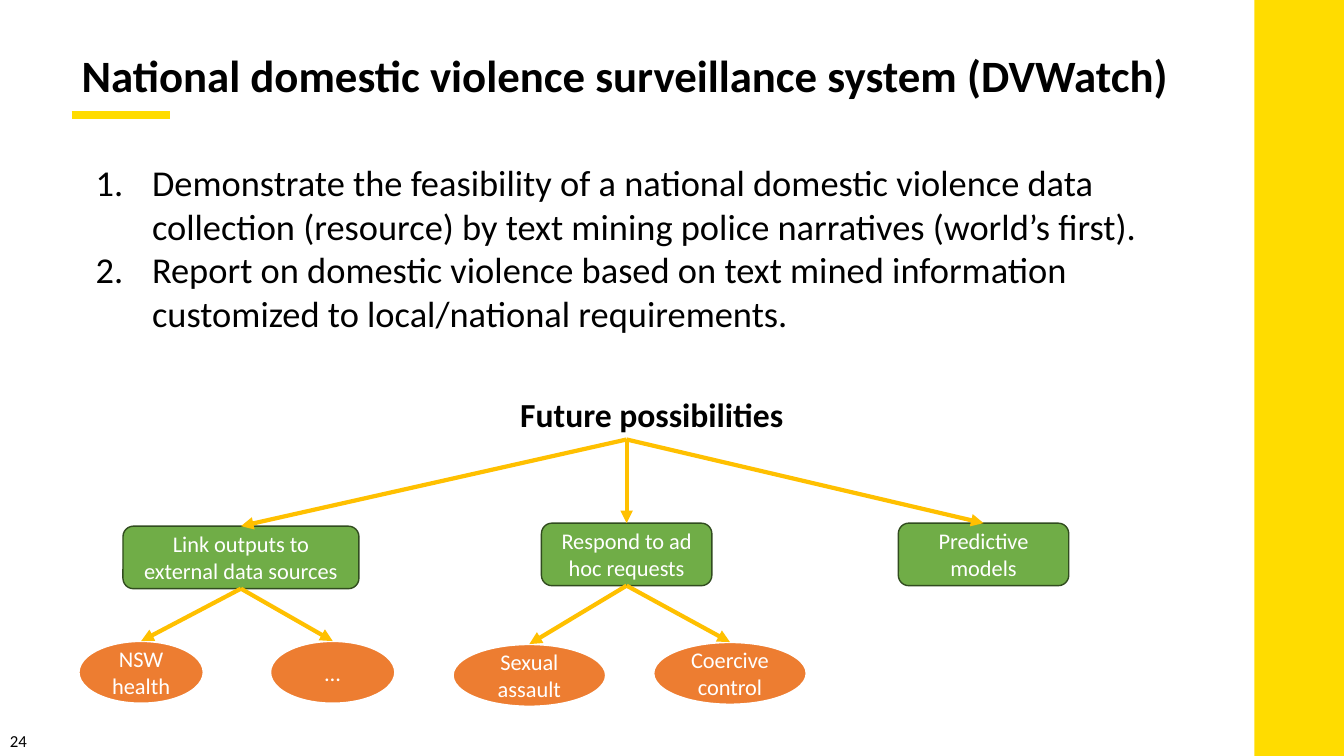
from dataclasses import dataclass

from lxml.etree import SubElement
from pptx import Presentation
from pptx.dml.color import RGBColor
from pptx.enum.shapes import MSO_CONNECTOR, MSO_SHAPE
from pptx.enum.text import MSO_ANCHOR, MSO_AUTO_SIZE, PP_ALIGN
from pptx.oxml.ns import qn
from pptx.shapes.autoshape import Shape
from pptx.shapes.connector import Connector
from pptx.slide import Slide
from pptx.text.text import TextFrame
from pptx.util import Emu, Pt


@dataclass(frozen=True)
class Theme:
    font: str = "Calibri"
    text: str = "000000"
    light: str = "FFFFFF"
    accent: str = "FFDC00"
    arrow: str = "FFC000"
    branch_fill: str = "70AD47"
    branch_line: str = "314C1F"
    leaf_fill: str = "ED7D31"
    title_size: int = 32
    body_size: int = 26
    heading_size: int = 24
    node_size: int = 16
    number_size: int = 12


@dataclass(frozen=True)
class Box:
    left: int
    top: int
    width: int
    height: int


@dataclass(frozen=True)
class Node:
    text: str
    box: Box
    children: tuple["Node", ...] = ()


THEME = Theme()
SLIDE_WIDTH, SLIDE_HEIGHT = 1333, 750
BAND_LEFT = 1244

GOALS = (
    "Demonstrate the feasibility of a national domestic violence data collection "
    "(resource) by text mining police narratives (world’s first).",
    "Report on domestic violence based on text mined information customized to "
    "local/national requirements.",
)

BRANCHES = (
    Node("Link outputs to external data sources", Box(122, 522, 234, 62), (
        Node("NSW health", Box(78, 636, 124, 62)),
        Node("…", Box(268, 636, 124, 62)),
    )),
    Node("Respond to ad hoc requests", Box(537, 519, 169, 62), (
        Node("Sexual assault", Box(449, 639, 152, 62)),
        Node("Coercive control", Box(648, 637, 152, 62)),
    )),
    Node("Predictive models", Box(891, 519, 169, 62)),
)


def px(length: int) -> Emu:
    """One px is a hundredth of an inch."""
    return Emu(length * 9144)


def place(box: Box) -> tuple[Emu, Emu, Emu, Emu]:
    return px(box.left), px(box.top), px(box.width), px(box.height)


def color(value: str) -> RGBColor:
    return RGBColor.from_string(value)


def format_text(text_frame: TextFrame, size: int, text_color: str = THEME.text,
                bold: bool = False, align: PP_ALIGN = PP_ALIGN.LEFT) -> None:
    for paragraph in text_frame.paragraphs:
        paragraph.alignment = align
        for run in paragraph.runs:
            run.font.name = THEME.font
            run.font.size = Pt(size)
            run.font.bold = bold
            run.font.color.rgb = color(text_color)


def add_text(slide: Slide, box: Box, text: str, wrap: bool = True) -> Shape:
    shape = slide.shapes.add_textbox(*place(box))
    shape.text_frame.word_wrap = wrap
    shape.text_frame.auto_size = MSO_AUTO_SIZE.SHAPE_TO_FIT_TEXT
    shape.text_frame.text = text
    return shape


def add_filled(slide: Slide, kind: MSO_SHAPE, box: Box, fill: str) -> Shape:
    shape = slide.shapes.add_shape(kind, *place(box))
    shape.shadow.inherit = False
    shape.fill.solid()
    shape.fill.fore_color.rgb = color(fill)
    shape.line.fill.background()
    return shape


def add_node(slide: Slide, node: Node, kind: MSO_SHAPE, fill: str,
             outline: str, outline_width: float) -> Shape:
    shape = add_filled(slide, kind, node.box, fill)
    shape.line.color.rgb = color(outline)
    shape.line.width = Pt(outline_width)
    shape.text_frame.word_wrap = True
    shape.text_frame.vertical_anchor = MSO_ANCHOR.MIDDLE
    shape.text_frame.text = node.text
    format_text(shape.text_frame, THEME.node_size, THEME.light, align=PP_ALIGN.CENTER)
    return shape


def add_line(slide: Slide, start: tuple[int, int], end: tuple[int, int],
             line_color: str, width: int) -> Connector:
    connector = slide.shapes.add_connector(
        MSO_CONNECTOR.STRAIGHT, *(px(value) for value in start + end))
    connector.line.color.rgb = color(line_color)
    connector.line.width = Pt(width)
    SubElement(connector.element.spPr, qn("a:effectLst"))
    return connector


def add_arrow(slide: Slide, parent: Shape, child: Shape) -> None:
    connector = add_line(slide, (0, 0), (0, 0), THEME.arrow, 3)
    connector.begin_connect(parent, 2)
    connector.end_connect(child, 0)
    SubElement(connector.line._get_or_add_ln(), qn("a:tailEnd"), type="triangle")


def add_title(slide: Slide) -> None:
    title = slide.shapes.title
    title.left, title.top, title.width, title.height = place(Box(71, 42, 1251, 64))
    title.text_frame.word_wrap = True
    title.text_frame.vertical_anchor = MSO_ANCHOR.TOP
    title.text_frame.text = "National domestic violence surveillance system (DVWatch)"
    format_text(title.text_frame, THEME.title_size, bold=True)
    add_line(slide, (71, 114), (169, 114), THEME.accent, 6)


def add_goals(slide: Slide) -> None:
    shape = add_text(slide, Box(35, 154, 1184, 185), "\n".join(GOALS))
    for paragraph in shape.text_frame.paragraphs:
        properties = paragraph._p.get_or_add_pPr()
        properties.set("marL", str(px(106)))
        properties.set("indent", str(px(-56)))
        SubElement(properties, qn("a:buFont"), typeface="+mj-lt")
        SubElement(properties, qn("a:buAutoNum"), type="arabicPeriod")
    format_text(shape.text_frame, THEME.body_size)


def add_tree(slide: Slide) -> None:
    root = add_text(slide, Box(288, 386, 667, 50), "Future possibilities")
    root.text_frame.paragraphs[0]._p.get_or_add_pPr().set("marL", str(px(50)))
    format_text(root.text_frame, THEME.heading_size, bold=True, align=PP_ALIGN.CENTER)
    for branch in BRANCHES:
        branch_shape = add_node(slide, branch, MSO_SHAPE.ROUNDED_RECTANGLE,
                                THEME.branch_fill, THEME.branch_line, 1)
        add_arrow(slide, root, branch_shape)
        for leaf in branch.children:
            leaf_shape = add_node(slide, leaf, MSO_SHAPE.OVAL,
                                  THEME.leaf_fill, THEME.light, 1.5)
            add_arrow(slide, branch_shape, leaf_shape)


def main() -> None:
    presentation = Presentation()
    presentation.slide_width = px(SLIDE_WIDTH)
    presentation.slide_height = px(SLIDE_HEIGHT)
    slide = presentation.slides.add_slide(presentation.slide_layouts[5])

    # Side band, title and goals
    band = Box(BAND_LEFT, 0, SLIDE_WIDTH - BAND_LEFT, SLIDE_HEIGHT)
    add_filled(slide, MSO_SHAPE.RECTANGLE, band, THEME.accent)
    add_title(slide)
    add_goals(slide)

    # Tree of future possibilities
    add_tree(slide)

    # Slide number
    number = add_text(slide, Box(0, 720, 37, 30), "24", wrap=False)
    format_text(number.text_frame, THEME.number_size)

    presentation.save("out.pptx")


if __name__ == "__main__":
    main()
